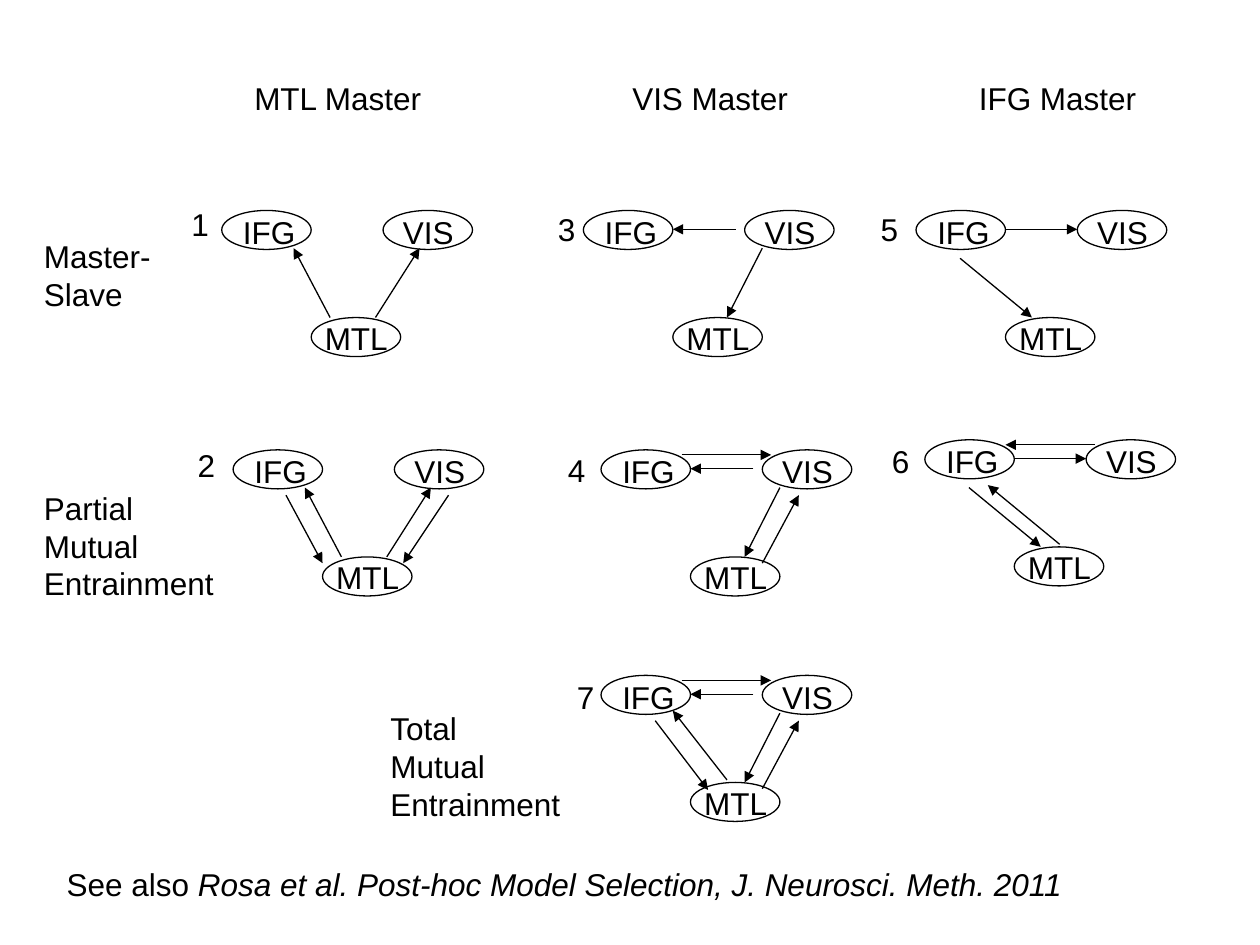
from pptx import Presentation
from pptx.dml.color import RGBColor
from pptx.enum.shapes import MSO_CONNECTOR as Line, MSO_SHAPE as Shape
from pptx.enum.text import MSO_AUTO_SIZE as AutoSize
from pptx.oxml.ns import qn
from pptx.util import Inches, Pt
from lxml.etree import SubElement

# The slide is a grid of 100 columns by 75 rows
COLS, ROWS = 100, 75
CELL = Inches(10) / COLS
INK = "000000"
FONT = {"name": "Arial", "size": Pt(18)}
LINE_H = 3

# Each node: ellipse and label, as offsets from the model's top left corner
NODE_W, NODE_H = 7.1, 3.1
NODES = {
    "IFG": ((0, 0), (0.7, -0.3), 6.2),
    "VIS": ((12.8, 0), (13.4, -0.3), 6),
    "MTL": ((7.1, 8.5), (7.2, 8.1), 7),
}

# Arrows between nodes, as offsets (x1, y1, x2, y2) from the same corner
MTL_TO_VIS = (12.2, 8.5, 15.7, 3)
MTL_TO_IFG = (8.6, 8.5, 5.7, 3)
VIS_TO_MTL_OUTER = (17.1, 3.6, 13.5, 9)
IFG_TO_MTL_OUTER = (4.2, 3.6, 7.1, 9)
VIS_TO_IFG = (12.1, 1.5, 7.1, 1.5)
VIS_TO_MTL = (14.2, 3, 11.4, 8.5)
IFG_TO_VIS_UPPER = (6.4, 0.4, 13.5, 0.4)
MTL_TO_VIS_OUTER = (12.8, 9, 15.7, 3.6)
IFG_TO_VIS = (7.1, 1.5, 12.8, 1.5)
IFG_TO_MTL = (3.5, 3.8, 9.2, 8.5)
VIS_TO_IFG_UPPER = (13.5, 0.4, 6.4, 0.4)
MTL_TO_IFG_OUTER = (10.7, 8.3, 5, 3.6)
MTL_TO_IFG_INNER = (10, 8.3, 5.7, 2.8)
IFG_TO_MTL_INNER = (4.3, 3.6, 8.5, 9.1)

VIS_MASTER = [VIS_TO_IFG, VIS_TO_MTL]
VIS_PARTIAL = VIS_MASTER + [IFG_TO_VIS_UPPER, MTL_TO_VIS_OUTER]
IFG_MASTER = [IFG_TO_VIS, IFG_TO_MTL]

# Number, its position, the model's corner, arrows
MODELS = [
    ("1", (14.2, 15.8), (17.6, 16.7), [MTL_TO_VIS, MTL_TO_IFG]),
    ("2", (14.7, 34.9), (18.5, 35.7),
     [MTL_TO_VIS, MTL_TO_IFG, VIS_TO_MTL_OUTER, IFG_TO_MTL_OUTER]),
    ("3", (43.3, 16.2), (46.3, 16.7), VIS_MASTER),
    ("4", (44.1, 35.3), (47.7, 35.7), VIS_PARTIAL),
    ("5", (68.9, 16.2), (72.7, 16.7), IFG_MASTER),
    ("6", (69.8, 34.6), (73.4, 34.9),
     IFG_MASTER + [VIS_TO_IFG_UPPER, MTL_TO_IFG_OUTER]),
    ("7", (44.8, 53.3), (47.7, 53.6),
     VIS_PARTIAL + [MTL_TO_IFG_INNER, IFG_TO_MTL_INNER]),
]

HEADINGS = [("MTL Master", 19.2, 15.3), ("VIS Master", 49.2, 14.4),
            ("IFG Master", 76.7, 14.5)]
ROW_LABELS = [
    (["Master-", "Slave"], 2.5, 18.3, 10.5),
    (["Partial", "Mutual", "Entrainment"], 2.5, 38.3, 15.5),
    (["Total", "Mutual", "Entrainment"], 30, 55.8, 15.5),
]


def cells(*values):
    return [round(v * CELL) for v in values]


def color(hex_value):
    return RGBColor.from_string(hex_value)


def add_text(s, lines, x, y, w):
    """Each line is a list of (text, italic) runs."""
    tf = s.shapes.add_textbox(*cells(x, y, w, 1 + LINE_H * len(lines))).text_frame
    tf.word_wrap = False
    tf.auto_size = AutoSize.SHAPE_TO_FIT_TEXT
    for i, runs in enumerate(lines):
        p = tf.paragraphs[0] if i == 0 else tf.add_paragraph()
        for text, italic in runs:
            r = p.add_run()
            r.text = text
            for key, value in {**FONT, "italic": italic}.items():
                setattr(r.font, key, value)
            r.font.color.rgb = color(INK)


def add_label(s, lines, x, y, w):
    add_text(s, [[(line, None)] for line in lines], x, y, w)


def set_line(shape):
    shape.line.color.rgb = color(INK)
    shape.line.width = Pt(0.75)


def add_node(s, x, y):
    sp = s.shapes.add_shape(Shape.OVAL, *cells(x, y, NODE_W, NODE_H))
    sp.shadow.inherit = False
    sp.fill.background()
    set_line(sp)


def add_arrow(s, x1, y1, x2, y2):
    cx = s.shapes.add_connector(Line.STRAIGHT, *cells(x1, y1, x2, y2))
    set_line(cx)
    SubElement(cx.line._get_or_add_ln(), qn("a:tailEnd"), type="triangle")
    SubElement(cx._element.spPr, qn("a:effectLst"))


def add_model(s, number, number_at, corner, arrows):
    x, y = corner
    for name, ((dx, dy), (tx, ty), w) in NODES.items():
        add_label(s, [name], x + tx, y + ty, w)
        add_node(s, x + dx, y + dy)
    for x1, y1, x2, y2 in arrows:
        add_arrow(s, x + x1, y + y1, x + x2, y + y2)
    add_label(s, [number], *number_at, 3.4)


def main():
    prs = Presentation()
    prs.slide_width, prs.slide_height = cells(COLS, ROWS)
    s = prs.slides.add_slide(prs.slide_layouts[6])

    # Models
    for model in MODELS:
        add_model(s, *model)

    # Row labels and column headings
    for lines, x, y, w in ROW_LABELS:
        add_label(s, lines, x, y, w)
    for text, x, w in HEADINGS:
        add_label(s, [text], x, 5.8, w)

    # Reference
    title = "Rosa et al. Post-hoc Model Selection, J. Neurosci. Meth. 2011"
    add_text(s, [[("See also ", None), (title, True)]], 4.3, 68.2, 82)
    prs.save("out.pptx")


if __name__ == "__main__":
    main()
